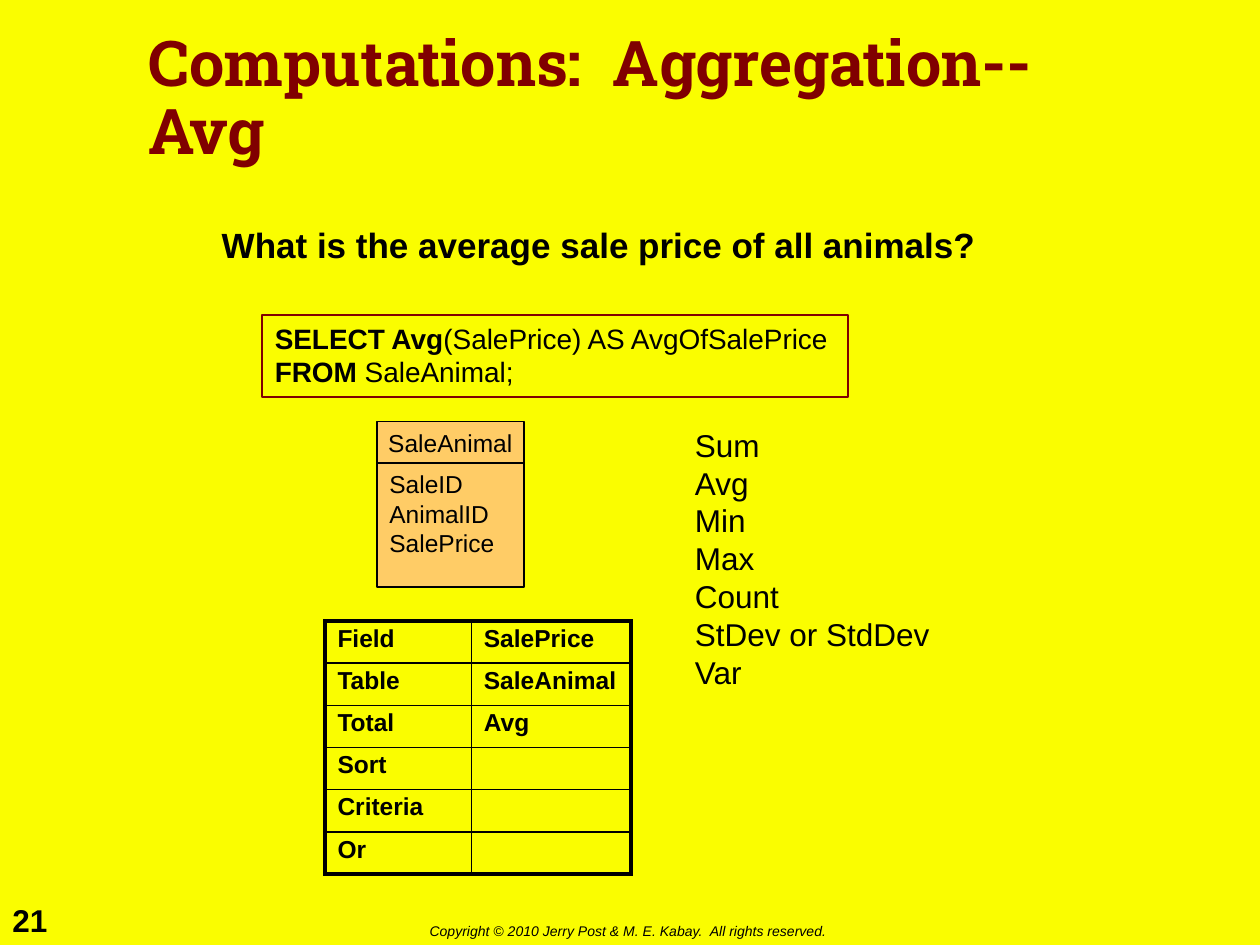
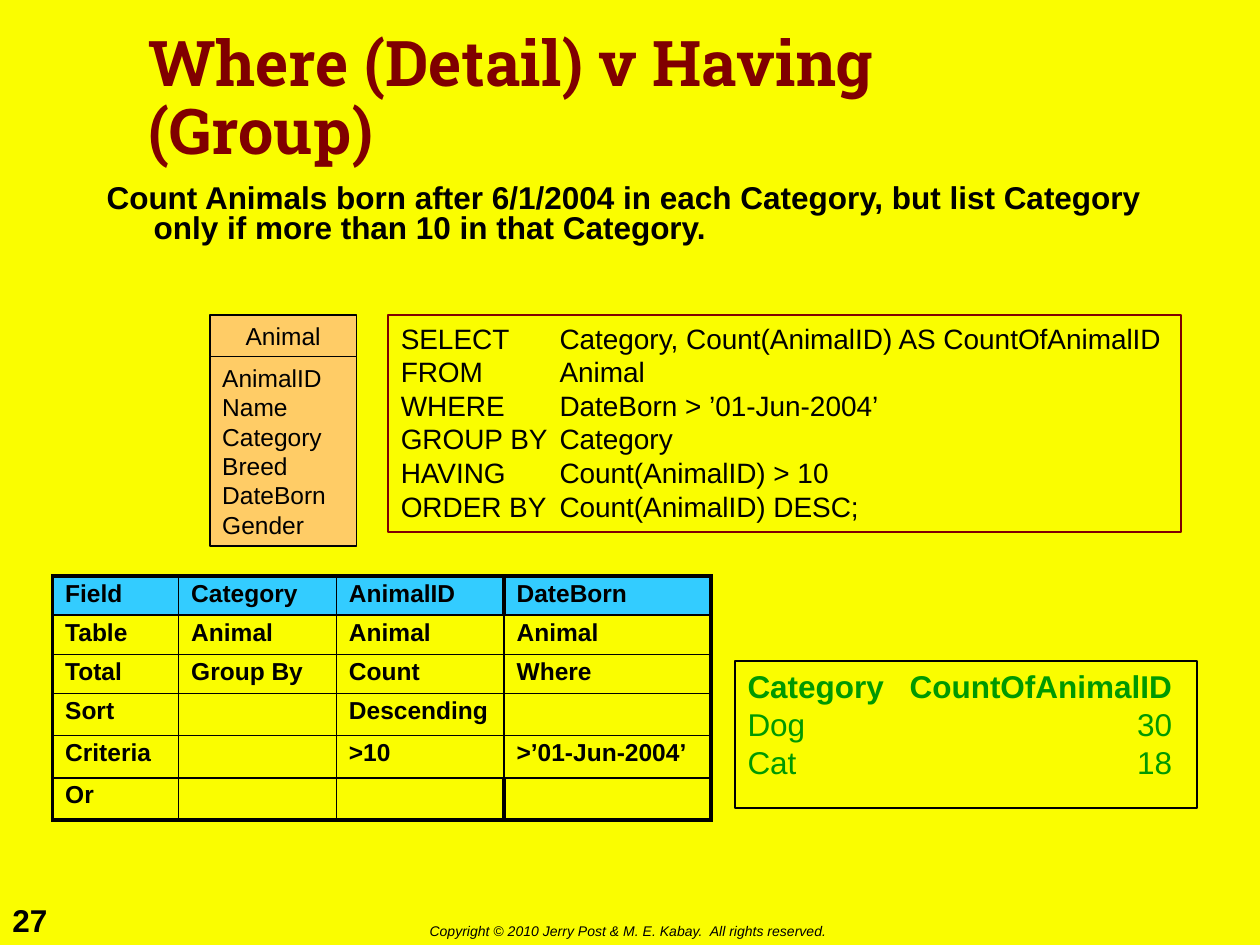
import pptx
import pptx.dml.color
import pptx.enum.shapes
import pptx.enum.text
import pptx.oxml.ns
import pptx.util
from lxml import etree

Cm = pptx.util.Cm
Pt = pptx.util.Pt
RGBColor = pptx.dml.color.RGBColor
PP_ALIGN = pptx.enum.text.PP_ALIGN
MSO_ANCHOR = pptx.enum.text.MSO_ANCHOR
qn = pptx.oxml.ns.qn

YELLOW = RGBColor(0xFA, 0xFD, 0x00)
MAROON = RGBColor(0x80, 0x00, 0x00)
BLACK = RGBColor(0x00, 0x00, 0x00)
ORANGE = RGBColor(0xFF, 0xCC, 0x66)
BLUE = RGBColor(0x33, 0xCC, 0xFF)
GREEN = RGBColor(0x00, 0x99, 0x00)

BODY_FONT = "Arial"
TITLE_FONT = "Roboto Slab"
TITLE_BOX = (2.74, 0.43, 19.89, 3.18)
NUMBER_BOX = (0, 18.03, 1.27, 1.02)
COPYRIGHT_BOX = (8.41, 18.47, 8.79, 0.61)
COPYRIGHT = "Copyright © 2010 Jerry Post & M. E. Kabay.  All rights reserved."
ENTITY_HEADER = 0.84
THIN, THICK = Pt(1), Pt(2.25)


def lengths(box):
    return [Cm(v) for v in box]


def style(r, size, color=BLACK, bold=False, italic=False, font=BODY_FONT):
    r.font.name = font
    r.font.size = Pt(size)
    r.font.color.rgb = color
    r.font.bold = bold
    r.font.italic = italic


def add_tab(p, position, align):
    tabs = etree.SubElement(p._p.get_or_add_pPr(), qn("a:tabLst"))
    etree.SubElement(tabs, qn("a:tab"), pos=str(Cm(position)), algn=align)


def write(tf, lines, size, color=BLACK, bold=False, italic=False, tab=None, align=PP_ALIGN.LEFT):
    tf.word_wrap = align == PP_ALIGN.LEFT
    for i, line in enumerate(lines):
        p = tf.add_paragraph() if i else tf.paragraphs[0]
        if tab:
            add_tab(p, *tab)
        p.alignment = align
        parts = [(line, bold)] if isinstance(line, str) else line
        for text, is_bold in parts:
            r = p.add_run()
            r.text = text
            style(r, size, color, is_bold, italic)


def add_text(slide, box, lines, size, **options):
    sp = slide.shapes.add_textbox(*lengths(box))
    write(sp.text_frame, lines, size, **options)
    return sp


def add_box(slide, box, lines, size, line=BLACK, fill=None, anchor=MSO_ANCHOR.TOP, **options):
    sp = slide.shapes.add_shape(pptx.enum.shapes.MSO_SHAPE.RECTANGLE, *lengths(box))
    sp.shadow.inherit = False
    if fill is None:
        sp.fill.background()
    else:
        sp.fill.solid()
        sp.fill.fore_color.rgb = fill
    sp.line.color.rgb = line
    sp.line.width = THIN
    sp.text_frame.vertical_anchor = anchor
    write(sp.text_frame, lines, size, **options)


def add_base(prs, title, number):
    slide = prs.slides.add_slide(prs.slide_layouts[5])
    sp = slide.shapes.title
    sp.left, sp.top, sp.width, sp.height = lengths(TITLE_BOX)
    tf = sp.text_frame
    tf.text = title
    tf.word_wrap = True
    tf.auto_size = pptx.enum.text.MSO_AUTO_SIZE.NONE
    tf.vertical_anchor = MSO_ANCHOR.MIDDLE
    p = tf.paragraphs[0]
    p.alignment = PP_ALIGN.LEFT
    p.line_spacing = 0.9
    style(p.runs[0], 36, MAROON, bold=True, font=TITLE_FONT)
    add_text(slide, NUMBER_BOX, [str(number)], 18, bold=True)
    add_text(slide, COPYRIGHT_BOX, [COPYRIGHT], 8, italic=True)
    return slide


def add_question(slide, box, text, size, spacing):
    sp = add_text(slide, box, [text], size, bold=True)
    p = sp.text_frame.paragraphs[0]
    p.line_spacing = spacing
    pPr = p._p.get_or_add_pPr()
    pPr.set("marL", str(Cm(0.95)))
    pPr.set("indent", str(-Cm(0.95)))


def add_entity(slide, box, name, fields):
    left, top, width, height = box
    add_box(slide, (left, top + ENTITY_HEADER, width, height - ENTITY_HEADER), fields, 14, fill=ORANGE)
    add_box(slide, (left, top, width, ENTITY_HEADER), [name], 14, fill=ORANGE,
            anchor=MSO_ANCHOR.MIDDLE, align=PP_ALIGN.CENTER)


def set_border(cell, side, width):
    ln = etree.SubElement(cell._tc.get_or_add_tcPr(), qn("a:ln" + side), w=str(width))
    fill = etree.SubElement(ln, qn("a:solidFill"))
    etree.SubElement(fill, qn("a:srgbClr"), val=str(BLACK))


def fill_cell(cell, text, fill):
    if fill is None:
        cell.fill.background()
    else:
        cell.fill.solid()
        cell.fill.fore_color.rgb = fill
    p = cell.text_frame.paragraphs[0]
    p.line_spacing = 0.9
    if text:
        p.text = text
        style(p.runs[0], 14, bold=True)
    else:
        etree.SubElement(p._p, qn("a:endParaRPr"), sz="1400")


def add_query_grid(slide, left, top, col_widths, row_heights, rows, header_fill=None, thick_left=()):
    n_rows, n_cols = len(row_heights), len(col_widths)
    box = (left, top, sum(col_widths), sum(row_heights))
    table = slide.shapes.add_table(n_rows, n_cols, *lengths(box)).table
    table.first_row = table.horz_banding = False
    for col, width in zip(table.columns, col_widths):
        col.width = Cm(width)
    for row, height in zip(table.rows, row_heights):
        row.height = Cm(height)
    for i, texts in enumerate(rows):
        for j, text in enumerate(texts):
            cell = table.cell(i, j)
            thick = {
                "L": j == 0 or (i, j) in thick_left,
                "R": j == n_cols - 1 or (i, j + 1) in thick_left,
                "T": i == 0,
                "B": i == n_rows - 1,
            }
            for side, is_thick in thick.items():
                set_border(cell, side, THICK if is_thick else THIN)
            fill_cell(cell, text, header_fill if i == 0 else None)


def build_average_slide(prs):
    slide = add_base(prs, "Computations:  Aggregation--Avg", 21)
    add_question(slide, (4.22, 4.47, 16.31, 1.27),
                 "What is the average sale price of all animals?", 20, 0.9)
    add_box(slide, (5.29, 6.35, 11.81, 1.65), [
        [("SELECT Avg", True), ("(SalePrice) AS AvgOfSalePrice", False)],
        [("FROM", True), (" SaleAnimal;", False)],
    ], 16, line=MAROON)
    add_entity(slide, (7.6, 8.5, 2.96, 3.34), "SaleAnimal", ["SaleID", "AnimalID", "SalePrice"])
    add_query_grid(slide, 6.55, 12.52, [2.95, 3.22], [0.85] * 6, [
        ("Field", "SalePrice"),
        ("Table", "SaleAnimal"),
        ("Total", "Avg"),
        ("Sort", ""),
        ("Criteria", ""),
        ("Or", ""),
    ])
    functions = ["Sum", "Avg", "Min", "Max", "Count", "StDev or StdDev", "Var"]
    add_text(slide, (13.76, 8.46, 5.29, 5.59), functions, 18)


def build_having_slide(prs):
    slide = add_base(prs, "Where (Detail) v Having (Group)", 27)
    add_question(slide, (1.9, 3.61, 21.59, 1.47),
                 "Count Animals born after 6/1/2004 in each Category, "
                 "but list Category only if more than 10 in that Category.", 18, 0.8)
    add_box(slide, (7.83, 6.35, 15.98, 4.37), [
        "SELECT\tCategory, Count(AnimalID) AS CountOfAnimalID",
        "FROM\tAnimal",
        "WHERE\tDateBorn > ’01-Jun-2004’",
        "GROUP BY\tCategory",
        "HAVING\tCount(AnimalID) > 10",
        "ORDER BY\tCount(AnimalID) DESC;",
    ], 16, line=MAROON, tab=(3.2, "l"))
    add_entity(slide, (4.23, 6.35, 2.96, 4.66), "Animal",
               ["AnimalID", "Name", "Category", "Breed", "DateBorn", "Gender"])
    add_query_grid(slide, 1.06, 11.61, [2.54, 3.18, 3.38, 4.17], [0.79] * 3 + [0.85] * 3, [
        ("Field", "Category", "AnimalID", "DateBorn"),
        ("Table", "Animal", "Animal", "Animal"),
        ("Total", "Group By", "Count", "Where"),
        ("Sort", "", "Descending", ""),
        ("Criteria", "", ">10", ">’01-Jun-2004’"),
        ("Or", "", "", ""),
    ], header_fill=BLUE, thick_left={(0, 3), (5, 3)})
    add_box(slide, (14.82, 13.33, 9.31, 2.96), [
        [("Category\tCountOfAnimalID", True)],
        "Dog\t30",
        "Cat\t18",
    ], 18, color=GREEN, tab=(8.56, "r"))


def main():
    prs = pptx.Presentation()
    prs.slide_width, prs.slide_height = Cm(25.4), Cm(19.05)
    background = prs.slide_master.background.fill
    background.solid()
    background.fore_color.rgb = YELLOW
    build_average_slide(prs)
    build_having_slide(prs)
    prs.save("out.pptx")


if __name__ == "__main__":
    main()
